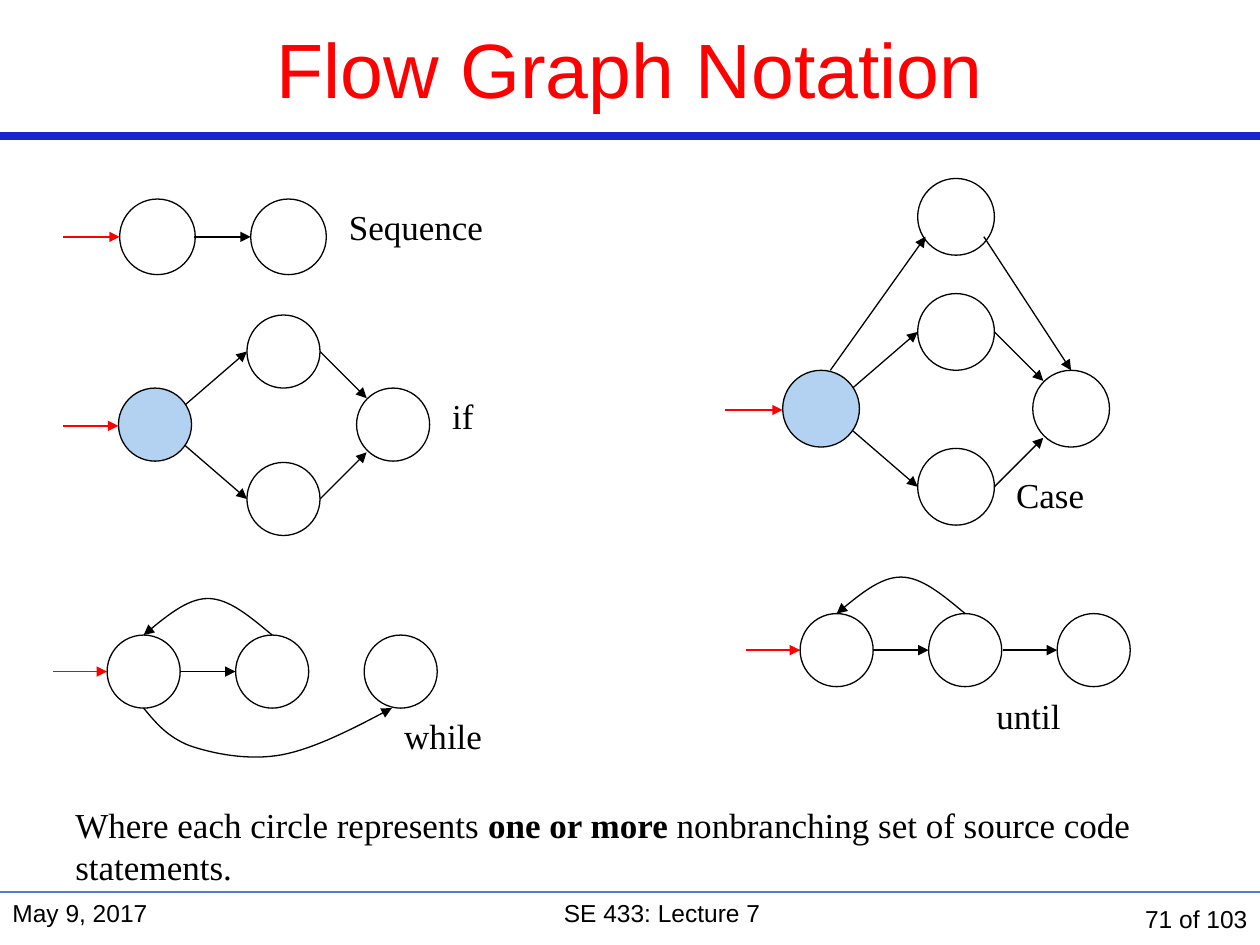
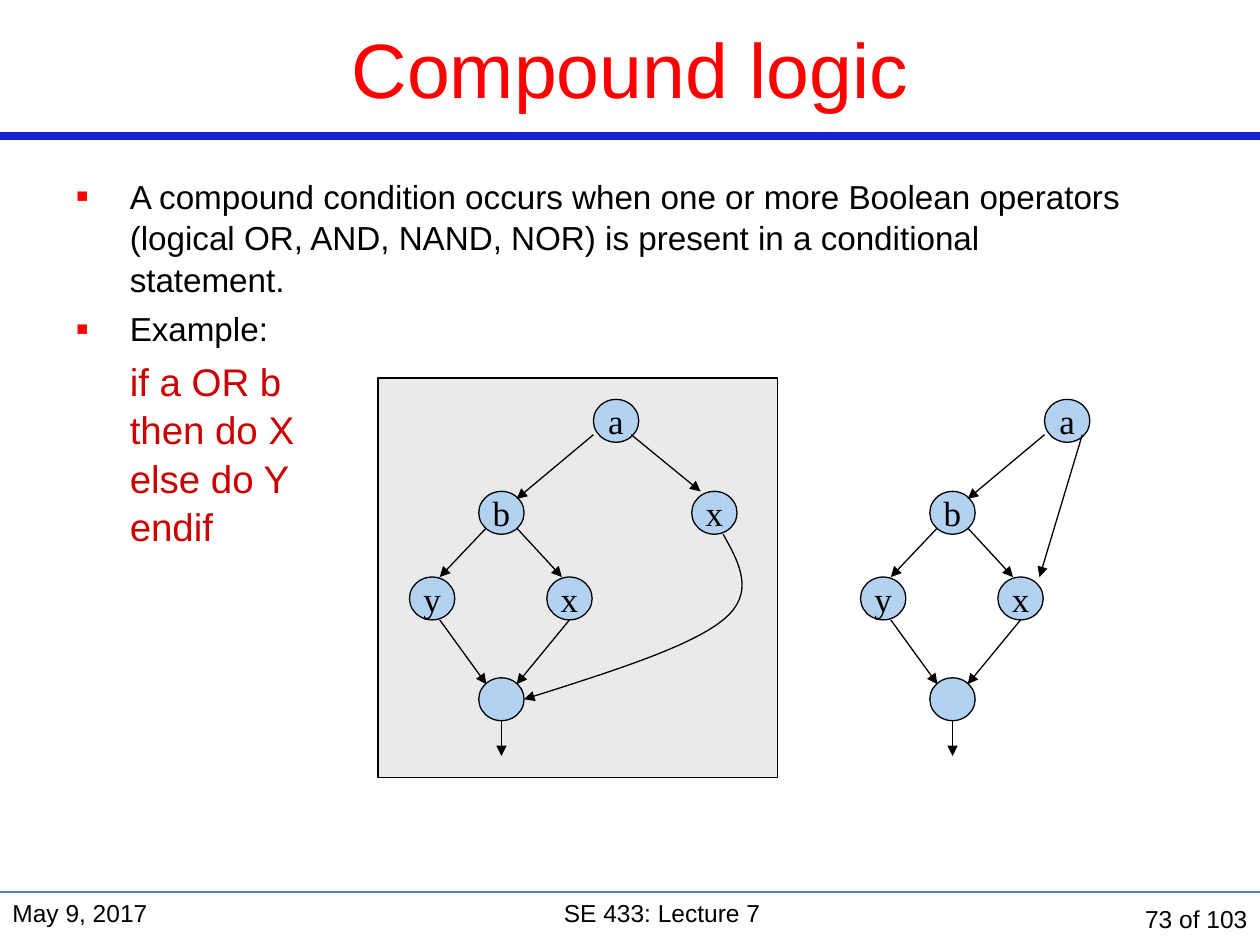
from dataclasses import dataclass

from lxml.etree import SubElement
from pptx import Presentation
from pptx.dml.color import RGBColor
from pptx.enum.shapes import MSO_CONNECTOR as Connector, MSO_SHAPE as Preset
from pptx.enum.text import MSO_ANCHOR as Anchor, MSO_AUTO_SIZE as AutoSize, PP_ALIGN as Align
from pptx.oxml.ns import qn
from pptx.util import Pt

EMU_PER_PX = 9144


@dataclass(frozen=True)
class Theme:
    """Colours, fonts and type sizes shared by the slides."""

    red: str = "FF0000"
    code_red: str = "CC0000"
    black: str = "000000"
    band: str = "1822CD"
    footer_rule: str = "4F81BD"
    node: str = "B3D1F0"
    panel: str = "EAEAEA"
    sans: str = "Arial"
    serif: str = "Times New Roman"
    title_size: int = 44
    bullet_size: int = 19
    code_size: int = 22
    label_size: int = 20
    footer_size: int = 14
    thin: float = 0.75
    thick: float = 4.5


THEME = Theme()


def px(length):
    """Turn px into EMU."""
    return round(length * EMU_PER_PX)


def rgb(colour):
    """Turn a hex string into a colour."""
    return RGBColor.from_string(colour)


def add_run(paragraph, text, size, font=THEME.serif, colour=THEME.black, bold=False):
    """Add one formatted run to a paragraph."""
    run = paragraph.add_run()
    run.text = text
    run.font.size = Pt(size)
    run.font.name = font
    run.font.bold = bold
    run.font.color.rgb = rgb(colour)


def place(shape, left, top, width, height):
    """Move and size a placeholder."""
    shape.left, shape.top, shape.width, shape.height = map(px, (left, top, width, height))


def style_shape(shape, fill=None):
    """Give a shape a thin black outline and an optional fill."""
    shape.shadow.inherit = False
    if fill:
        shape.fill.solid()
        shape.fill.fore_color.rgb = rgb(fill)
    else:
        shape.fill.background()
    shape.line.color.rgb = rgb(THEME.black)
    shape.line.width = Pt(THEME.thin)


def add_arrowhead(shape):
    """Put a triangle at the end of a line."""
    SubElement(shape.element.spPr.find(qn("a:ln")), qn("a:tailEnd"), type="triangle")


def add_line(slide, start, end, colour, width=THEME.thin):
    """Draw a straight line without shadow."""
    line = slide.shapes.add_connector(Connector.STRAIGHT, *map(px, (*start, *end)))
    line.line.color.rgb = rgb(colour)
    line.line.width = Pt(width)
    SubElement(line.element.spPr, qn("a:effectLst"))
    return line


def add_text_box(slide, left, top, width, height, align=Align.LEFT, anchor=Anchor.TOP):
    """Add a wrapping text box and return its first paragraph."""
    frame = slide.shapes.add_textbox(*map(px, (left, top, width, height))).text_frame
    frame.word_wrap = True
    frame.vertical_anchor = anchor
    frame.paragraphs[0].alignment = align
    return frame.paragraphs[0]


def bezier_points(points, steps=16):
    """Sample a chain of cubic curves given as start, controls and ends."""
    sampled = []
    for first in range(0, len(points) - 1, 3):
        segment = points[first:first + 4]
        for step in range(1, steps + 1):
            t = step / steps
            weights = ((1 - t) ** 3, 3 * t * (1 - t) ** 2, 3 * t * t * (1 - t), t ** 3)
            sampled.append(tuple(sum(w * p[axis] for w, p in zip(weights, segment))
                                 for axis in (0, 1)))
    return sampled


@dataclass
class Region:
    """A box on a slide that places graph parts by local px."""

    slide: object
    left: int
    top: int
    scale: float = 1

    def at(self, x, y):
        """Turn a local point into a slide point."""
        return self.left + x * self.scale, self.top + y * self.scale

    def node(self, x, y, width, height=None, fill=None, text=""):
        """Draw a graph node with an optional letter."""
        size = width * self.scale, (height or width) * self.scale
        shape = self.slide.shapes.add_shape(Preset.OVAL, *map(px, (*self.at(x, y), *size)))
        style_shape(shape, fill)
        if text:
            frame = shape.text_frame
            frame.word_wrap = False
            frame.vertical_anchor = Anchor.MIDDLE
            frame.paragraphs[0].alignment = Align.CENTER
            add_run(frame.paragraphs[0], text, THEME.label_size)

    def arrow(self, start, end, colour=THEME.black):
        """Draw a straight arrow."""
        add_arrowhead(add_line(self.slide, self.at(*start), self.at(*end), colour))

    def curve(self, *points):
        """Draw a curved arrow."""
        start, *rest = [tuple(map(px, self.at(*point)))
                        for point in (points[0], *bezier_points(points))]
        builder = self.slide.shapes.build_freeform(*start)
        builder.add_line_segments(rest, close=False)
        shape = builder.convert_to_shape()
        style_shape(shape)
        add_arrowhead(shape)

    def label(self, x, y, text, width=146):
        """Write the name of a construct."""
        paragraph = add_text_box(self.slide, *self.at(x, y), width, 44)
        add_run(paragraph, text, THEME.label_size)


def add_base(presentation, layout, title, page):
    """Add a slide with its title, bands and footer."""
    slide = presentation.slides.add_slide(presentation.slide_layouts.get_by_name(layout))
    add_line(slide, (0, 108), (1000, 108), THEME.band, THEME.thick)
    add_line(slide, (0, 708), (1000, 708), THEME.footer_rule)
    place(slide.shapes.title, 0, 0, 1000, 108)
    frame = slide.shapes.title.text_frame
    frame.auto_size = AutoSize.NONE
    frame.vertical_anchor = Anchor.MIDDLE
    frame.paragraphs[0].alignment = Align.CENTER
    add_run(frame.paragraphs[0], title, THEME.title_size, THEME.sans, THEME.red)
    for left, width, text, align, anchor in (
        (0, 217, "May 9, 2017", Align.LEFT, Anchor.TOP),
        (217, 617, "SE 433: Lecture 7", Align.CENTER, Anchor.TOP),
        (833, 167, f"{page} of 103", Align.RIGHT, Anchor.MIDDLE),
    ):
        paragraph = add_text_box(slide, left, 708, width, 42, align, anchor)
        add_run(paragraph, text, THEME.footer_size, THEME.sans)
    return slide


def draw_sequence(region):
    """Draw two nodes in a row."""
    for x in (45, 149):
        region.node(x, 0, 60)
    region.arrow((0, 30), (45, 30), THEME.red)
    region.arrow((104, 30), (149, 30))
    region.label(217, 0, "Sequence")


def draw_branch(region):
    """Draw a decision with two ways that meet again."""
    region.arrow((0, 88), (44, 88), THEME.red)
    for way_y, split_y, join_y in ((0, 73, 66), (117, 102, 109)):
        region.arrow((95, split_y), (146, way_y + 29))
        region.arrow((204, way_y + 29), (241, join_y))
        region.node(146, way_y, 58)
    region.node(44, 58, 58, fill=THEME.node)
    region.node(233, 58, 58)


def draw_case(region):
    """Draw a decision with a third way above."""
    draw_branch(region)
    region.node(146, -87, 58)
    region.arrow((80, 58), (152, -43))
    region.arrow((196, -43), (262, 58))
    region.label(211, 131, "Case", 99)


def draw_loop(region, links):
    """Draw three nodes, the given number of links and the way back."""
    step, size = 102, 58
    for index in range(3):
        region.node(43 + index * step, 29, size)
    region.arrow((0, 58), (43, 58), THEME.red)
    for index in range(links):
        region.arrow((102 + index * step, 58), (145 + index * step, 58))
    region.curve((174, 29), (157, 15), (140, 0), (123, 0), (106, 0), (89, 15), (72, 29))


def draw_while(region):
    """Draw a loop that is left from its first node."""
    draw_loop(region, 1)
    region.curve((72, 87), (82, 99), (91, 110), (109, 117), (127, 123),
                 (155, 129), (182, 124), (208, 119), (239, 103), (269, 87))
    region.label(269, 87, "while")


def draw_until(region):
    """Draw a loop that is left from its second node."""
    draw_loop(region, 2)
    region.label(189, 88, "until")


def draw_condition(region):
    """Draw the part of the condition graph common to both forms."""
    for x, y, text in ((146, 0, "a"), (55, 73, "b"), (109, 141, "x"), (0, 141, "y"), (55, 221, "")):
        region.node(x, y, 36, 34, THEME.node, text)
    for start, end in (
        ((146, 28), (85, 79)), ((61, 102), (24, 141)), ((85, 102), (121, 141)),
        ((24, 175), (61, 226)), ((127, 175), (85, 226)), ((73, 255), (73, 283)),
    ):
        region.arrow(start, end)


def draw_separate_x(region):
    """Draw the condition graph with its own node x for each way."""
    draw_condition(region)
    region.node(224, 73, 36, 34, THEME.node, "x")
    region.arrow((176, 28), (231, 73))
    region.curve((249, 107), (262, 130), (275, 154), (249, 175), (222, 197), (157, 217), (91, 238))


def draw_shared_x(region):
    """Draw the condition graph with one node x."""
    draw_condition(region)
    region.arrow((176, 28), (142, 141))


def format_item(paragraph, bullet):
    """Set the indent, spacing and bullet of a list item."""
    paragraph.line_spacing = 1.05
    paragraph.space_before = Pt(4)
    properties = paragraph._p.get_or_add_pPr()
    properties.set("marL", str(px(43)))
    properties.set("indent", str(px(-43 if bullet else 0)))
    if bullet:
        colour = SubElement(properties, qn("a:buClr"))
        SubElement(colour, qn("a:srgbClr"), val=THEME.red)
        SubElement(properties, qn("a:buSzPct"), val="114000")
        SubElement(properties, qn("a:buFont"), typeface=THEME.sans)
        SubElement(properties, qn("a:buChar"), char="▪")
    else:
        SubElement(properties, qn("a:buNone"))


def fill_body(body):
    """Write the definition and the example into the body."""
    place(body, 50, 133, 867, 475)
    frame = body.text_frame
    frame.auto_size = AutoSize.NONE
    frame.margin_right = px(20)
    definition, example, code = frame.paragraphs[0], frame.add_paragraph(), frame.add_paragraph()
    for paragraph, text in (
        (definition, "A compound condition occurs when one or more Boolean operators "
                     "(logical OR, AND, NAND, NOR) is present in a conditional statement."),
        (example, "Example:"),
    ):
        format_item(paragraph, True)
        add_run(paragraph, text, THEME.bullet_size, THEME.sans)
    format_item(code, False)
    for index, line in enumerate(("if a OR b", "then do X", "else do Y", "endif")):
        if index:
            code.add_line_break()
        add_run(code, line, THEME.code_size, THEME.sans, THEME.code_red)


def build_notation(presentation):
    """Build the slide of flow graph constructs."""
    slide = add_base(presentation, "Title Only", "Flow Graph Notation", 71)
    draw_sequence(Region(slide, 50, 158))
    decision = Region(slide, 50, 250)
    draw_branch(decision)
    decision.label(299, 58, "if")
    draw_case(Region(slide, 575, 233, 1.05))
    draw_while(Region(slide, 42, 475))
    draw_until(Region(slide, 592, 458))
    note = add_text_box(slide, 50, 633, 950, 77)
    add_run(note, "Where each circle represents ", THEME.label_size)
    add_run(note, "one or more ", THEME.label_size, bold=True)
    add_run(note, "nonbranching set of source code statements.", THEME.label_size)


def build_compound(presentation):
    """Build the slide on compound conditions."""
    slide = add_base(presentation, "Title and Content", "Compound logic", 73)
    fill_body(slide.placeholders[1])
    panel = slide.shapes.add_shape(Preset.RECTANGLE, *map(px, (300, 300, 317, 317)))
    style_shape(panel, THEME.panel)
    draw_separate_x(Region(slide, 325, 317))
    draw_shared_x(Region(slide, 683, 317))


def main():
    """Build and save the presentation."""
    presentation = Presentation()
    presentation.slide_width, presentation.slide_height = px(1000), px(750)
    build_notation(presentation)
    build_compound(presentation)
    presentation.save("out.pptx")


if __name__ == "__main__":
    main()
